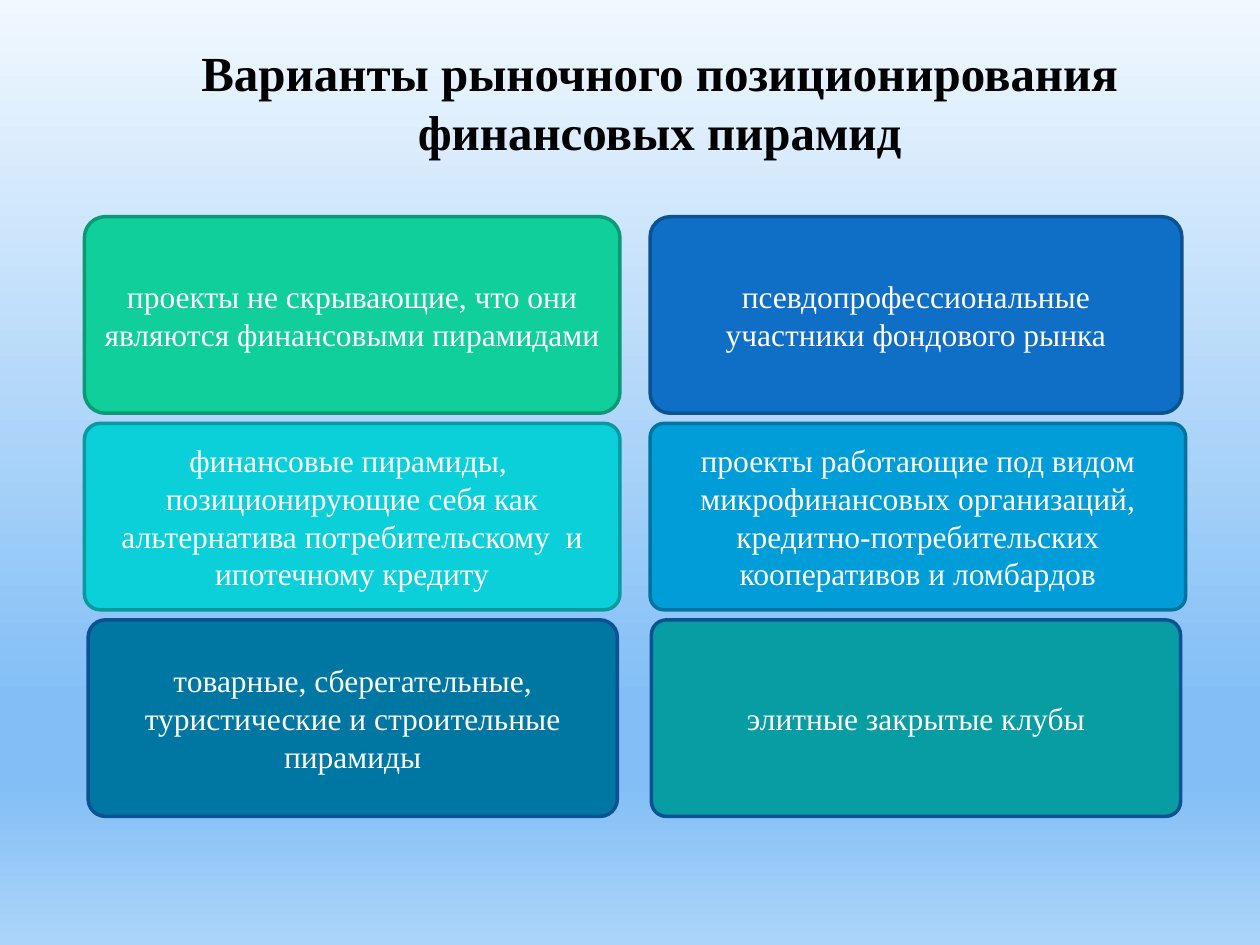
from copy import deepcopy

from pptx import Presentation
from pptx.dml.color import RGBColor
from pptx.enum.shapes import MSO_SHAPE
from pptx.enum.text import MSO_ANCHOR, MSO_AUTO_SIZE, PP_ALIGN
from pptx.oxml.ns import qn
from pptx.util import Pt

COLORS = {
    "black": "000000", "white": "FFFFFF",
    "sky_top": "F1F8FE", "sky": "83BFF6", "sky_bottom": "ACD4F9",
    "green": "10CF9B", "green_edge": "0C9973",
    "cyan": "0BD0D9", "cyan_edge": "089AA1",
    "azure": "009DD9", "azure_edge": "0074A1",
    "blue": "0F6FC6", "blue_edge": "0B5292",
    "deep": "0076A3", "teal": "089CA3",
}
SKY = [(0, "sky_top"), (0.74, "sky"), (0.83, "sky"), (1, "sky_bottom")]
ROWS = [(123.84, 112.32), (241.92, 106.56), (354.24, 112.32)]
CARDS = [
    (0, 48.24, 306, 0.106, "green", "green_edge",
     ["проекты не скрывающие, что они являются финансовыми пирамидами"]),
    (1, 48.24, 306, 0.085, "cyan", "cyan_edge",
     ["финансовые пирамиды, ",
      "позиционирующие себя как альтернатива потребительскому  и ипотечному кредиту"]),
    (1, 371.52, 306, 0.074, "azure", "azure_edge",
     ["проекты работающие под видом микрофинансовых организаций,",
      "кредитно-потребительских кооперативов и ломбардов"]),
    (0, 371.52, 303.84, 0.102, "blue", "blue_edge",
     ["псевдопрофессиональные участники фондового рынка"]),
    (2, 50.4, 302.4, 0.088, "deep", "blue_edge",
     ["товарные, сберегательные, туристические и строительные пирамиды"]),
    (2, 372.24, 302.4, 0.076, "teal", "blue_edge",
     ["элитные закрытые клубы"]),
]


class Deck:
    """Holds the text style and the current slide."""

    font = "Times New Roman"

    def __init__(self, prs):
        self.s = prs.slides.add_slide(prs.slide_layouts[6])

    def color(self, name):
        return RGBColor.from_string(COLORS[name])

    def background(self, stops):
        fill = self.s.background.fill
        fill.gradient()
        fill.gradient_angle = 270
        gs = next(self.s.element.iter(qn("a:gs")))
        for _ in stops[2:]:
            gs.addnext(deepcopy(gs))
        for stop, (position, name) in zip(fill.gradient_stops, stops):
            stop.position = position
            stop.color.rgb = self.color(name)

    def add_text(self, tf, paragraphs, size, color, bold=False):
        tf.word_wrap = True
        for i, text in enumerate(paragraphs):
            p = tf.add_paragraph() if i else tf.paragraphs[0]
            p.alignment = PP_ALIGN.CENTER
            r = p.add_run()
            r.text = text
            r.font.name = self.font
            r.font.size = Pt(size)
            r.font.bold = bold
            r.font.color.rgb = self.color(color)

    def title(self, x, y, w, h, text):
        tf = self.s.shapes.add_textbox(Pt(x), Pt(y), Pt(w), Pt(h)).text_frame
        self.add_text(tf, [text], 28, "black", bold=True)
        tf.auto_size = MSO_AUTO_SIZE.SHAPE_TO_FIT_TEXT

    def card(self, x, y, w, h, radius, fill, edge, paragraphs):
        sp = self.s.shapes.add_shape(
            MSO_SHAPE.ROUNDED_RECTANGLE, Pt(x), Pt(y), Pt(w), Pt(h))
        sp.adjustments[0] = radius
        sp.shadow.inherit = False
        sp.fill.solid()
        sp.fill.fore_color.rgb = self.color(fill)
        sp.line.color.rgb = self.color(edge)
        sp.line.width = Pt(2)
        sp.text_frame.vertical_anchor = MSO_ANCHOR.MIDDLE
        self.add_text(sp.text_frame, paragraphs, 18, "white")


def main():
    prs = Presentation()
    prs.slide_width, prs.slide_height = Pt(720), Pt(540)
    deck = Deck(prs)
    deck.background(SKY)
    deck.title(93.6, 20.88, 566.64, 74.88,
               "Варианты рыночного позиционирования финансовых пирамид")
    for row, x, w, radius, fill, edge, paragraphs in CARDS:
        y, h = ROWS[row]
        deck.card(x, y, w, h, radius, fill, edge, paragraphs)
    prs.save("out.pptx")


if __name__ == "__main__":
    main()
